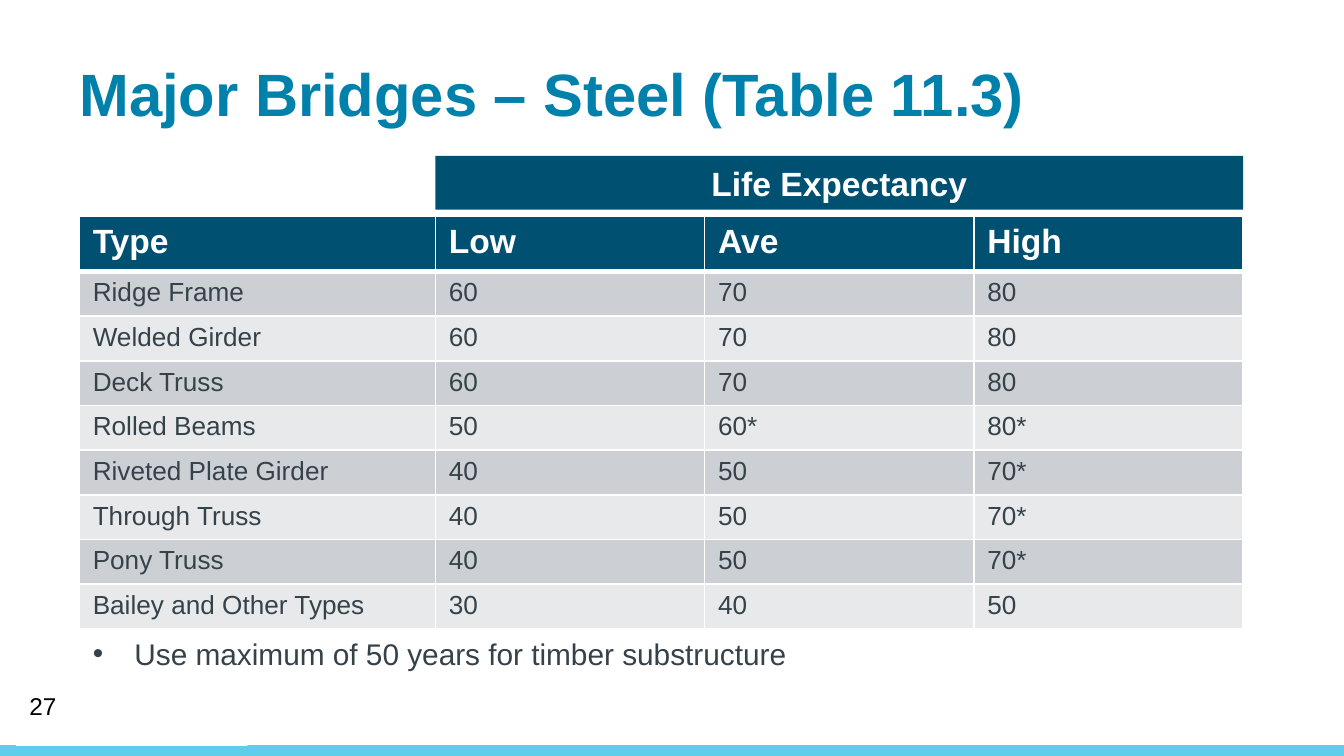
from dataclasses import dataclass

from lxml.etree import SubElement
from pptx import Presentation
from pptx.dml.color import RGBColor
from pptx.enum.shapes import MSO_SHAPE
from pptx.enum.text import MSO_ANCHOR as Anchor, MSO_AUTO_SIZE as AutoSize, PP_ALIGN as Align
from pptx.oxml.ns import qn
from pptx.util import Inches, Pt


@dataclass(frozen=True)
class Theme:
    font: str = "Arial"
    title: str = "0081AB"
    header: str = "005072"
    ink: str = "36424A"
    black: str = "000000"
    white: str = "FFFFFF"
    accent: str = "5FCEEA"
    bands: tuple = ("CCD0D5", "E7E9EB")
    title_size: float = 32
    header_size: float = 18
    note_size: float = 16
    cell_size: float = 14
    number_size: float = 13


@dataclass(frozen=True)
class Box:
    left: float
    top: float
    width: float
    height: float

    def lengths(self) -> list:
        return [Inches(value) for value in (self.left, self.top, self.width, self.height)]


@dataclass(frozen=True)
class Bridge:
    kind: str
    low: str
    average: str
    high: str


THEME = Theme()
SLIDE_WIDTH = 10
SLIDE_HEIGHT = SLIDE_WIDTH * 9 / 16
BAND_HEIGHT = 0.08
HEADINGS = ("Type", "Low", "Ave", "High")
BRIDGES = (
    Bridge("Ridge Frame", "60", "70", "80"),
    Bridge("Welded Girder", "60", "70", "80"),
    Bridge("Deck Truss", "60", "70", "80"),
    Bridge("Rolled Beams", "50", "60*", "80*"),
    Bridge("Riveted Plate Girder", "40", "50", "70*"),
    Bridge("Through Truss", "40", "50", "70*"),
    Bridge("Pony Truss", "40", "50", "70*"),
    Bridge("Bailey and Other Types", "30", "40", "50"),
)
TABLE_BOX = Box(0.59, 1.61, 8.66, 3.07)
TYPE_WIDTH = 2.65
HEADER_HEIGHT = 0.41


def add_bullet(para, indent: float) -> None:
    properties = para._p.get_or_add_pPr()
    properties.set("marL", str(Inches(indent)))
    properties.set("indent", str(Inches(-indent)))
    SubElement(properties, qn("a:buFont"), typeface=THEME.font)
    SubElement(properties, qn("a:buChar"), char="•")


def write(frame, text: str, size: float, color: str, bold: bool = False,
          bullet_indent: float = 0):
    """Put one formatted paragraph in a text frame and return it."""
    frame.text = text
    para = frame.paragraphs[0]
    if bullet_indent:
        add_bullet(para, bullet_indent)
    para.font.name = THEME.font
    para.font.size = Pt(size)
    para.font.bold = bold
    para.font.color.rgb = RGBColor.from_string(color)
    return para


def place(shape, box: Box) -> None:
    shape.left, shape.top, shape.width, shape.height = box.lengths()


def add_block(slide, box: Box, color: str):
    block = slide.shapes.add_shape(MSO_SHAPE.RECTANGLE, *box.lengths())
    block.shadow.inherit = False
    block.fill.solid()
    block.fill.fore_color.rgb = RGBColor.from_string(color)
    block.line.fill.background()
    return block


def set_borders(cell, top: float, bottom: float) -> None:
    """Draw white cell borders, placed ahead of the cell fill."""
    properties = cell._tc.get_or_add_tcPr()
    for side, width in (("L", 1), ("R", 1), ("T", top), ("B", bottom)):
        line = SubElement(properties, qn(f"a:ln{side}"), w=str(Pt(width)))
        fill = SubElement(line, qn("a:solidFill"))
        SubElement(fill, qn("a:srgbClr"), val=THEME.white)


def fill_row(table, index: int, texts: tuple, fill: str, size: float, color: str,
             bold: bool = False) -> None:
    # The heading row and the first band share a thick rule
    top = 3 if index == 1 else 1
    bottom = 3 if index == 0 else 1
    for cell, text in zip(table.rows[index].cells, texts):
        set_borders(cell, top, bottom)
        cell.fill.solid()
        cell.fill.fore_color.rgb = RGBColor.from_string(fill)
        write(cell.text_frame, text, size, color, bold)


def add_bridge_table(slide) -> None:
    table = slide.shapes.add_table(
        len(BRIDGES) + 1, len(HEADINGS), *TABLE_BOX.lengths()).table
    year_width = (TABLE_BOX.width - TYPE_WIDTH) / (len(HEADINGS) - 1)
    for index, column in enumerate(table.columns):
        column.width = Inches(year_width if index else TYPE_WIDTH)
    row_height = (TABLE_BOX.height - HEADER_HEIGHT) / len(BRIDGES)
    for index, row in enumerate(table.rows):
        row.height = Inches(row_height if index else HEADER_HEIGHT)

    fill_row(table, 0, HEADINGS, THEME.header, THEME.header_size, THEME.white, True)
    for index, bridge in enumerate(BRIDGES, start=1):
        texts = (bridge.kind, bridge.low, bridge.average, bridge.high)
        band = THEME.bands[(index - 1) % len(THEME.bands)]
        fill_row(table, index, texts, band, THEME.cell_size, THEME.ink)


def add_title(slide) -> None:
    title = slide.shapes.title
    place(title, Box(0.59, 0.37, 8.99, 0.57))
    frame = title.text_frame
    frame.auto_size = AutoSize.NONE
    frame.vertical_anchor = Anchor.TOP
    frame.margin_left = 0
    para = write(frame, "Major Bridges – Steel (Table 11.3)",
                 THEME.title_size, THEME.title, True)
    para.alignment = Align.LEFT


def add_note(slide) -> None:
    body = slide.placeholders[1]
    place(body, Box(0.59, 4.68, 8.66, 0.37))
    body.text_frame.auto_size = AutoSize.NONE
    para = write(body.text_frame, "Use maximum of 50 years for timber substructure",
                 THEME.note_size, THEME.ink, bullet_indent=0.31)
    para.space_before = Pt(0)


def main() -> None:
    deck = Presentation()
    deck.slide_width, deck.slide_height = Inches(SLIDE_WIDTH), Inches(SLIDE_HEIGHT)
    slide = deck.slides.add_slide(deck.slide_layouts[1])

    # Footer band
    add_block(slide, Box(0, SLIDE_HEIGHT - BAND_HEIGHT, SLIDE_WIDTH, BAND_HEIGHT),
              THEME.accent)
    add_block(slide, Box(0.12, 5.42, 1.72, 0.13), THEME.white)

    # Title, table and its spanning heading
    add_title(slide)
    add_bridge_table(slide)
    heading = add_block(slide, Box(3.24, 1.16, 6.01, 0.4), THEME.header)
    para = write(heading.text_frame, "Life Expectancy",
                 THEME.header_size, THEME.white, True)
    para.alignment = Align.CENTER

    # Note and slide number
    add_note(slide)
    number = slide.shapes.add_textbox(*Box(0.12, 5.1, 2.25, 0.3).lengths())
    number.text_frame.word_wrap = True
    number.text_frame.vertical_anchor = Anchor.MIDDLE
    write(number.text_frame, "27", THEME.number_size, THEME.black)

    deck.save("out.pptx")


if __name__ == "__main__":
    main()
